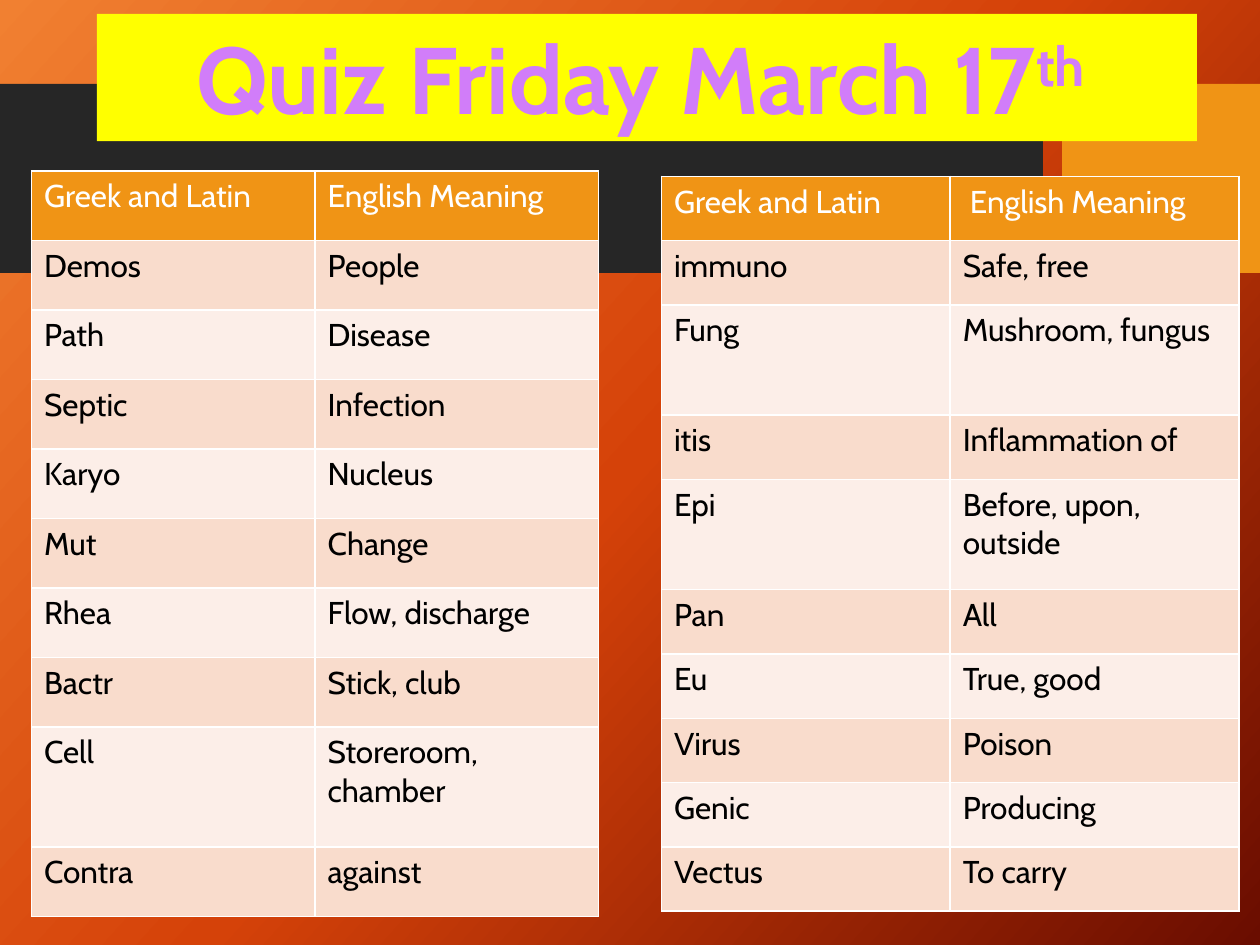
from copy import deepcopy
from dataclasses import dataclass

from pptx import Presentation
from pptx.dml.color import RGBColor
from pptx.enum import shapes, text
from pptx.oxml import ns, xmlchemy
from pptx.util import Pt


@dataclass(frozen=True)
class Theme:
    font: str = "Cabin"
    title_size: int = 54
    table_size: int = 18
    gradient: tuple = ("F18031", "D54209", "6A0D00")
    charcoal: str = "262626"
    orange: str = "F09415"
    yellow: str = "FFFF00"
    purple: str = "D17DF9"
    white: str = "FFFFFF"
    black: str = "000000"
    bands: tuple = ("F9DCCC", "FCEEE8")


THEME = Theme()

LEFT_WORDS = [
    ("Greek and Latin", "English Meaning"),
    ("Demos", "People"),
    ("Path", "Disease"),
    ("Septic", "Infection"),
    ("Karyo", "Nucleus"),
    ("Mut", "Change"),
    ("Rhea", "Flow, discharge"),
    ("Bactr", "Stick, club"),
    ("Cell", "Storeroom, chamber"),
    ("Contra", "against"),
]
RIGHT_WORDS = [
    ("Greek and Latin", " English Meaning"),
    ("immuno", "Safe, free"),
    ("Fung", "Mushroom, fungus"),
    ("itis", "Inflammation of"),
    ("Epi", "Before, upon, outside"),
    ("Pan", "All"),
    ("Eu", "True, good"),
    ("Virus", "Poison"),
    ("Genic", "Producing"),
    ("Vectus", "To carry"),
]


def rgb(value):
    return RGBColor.from_string(value)


def style_font(font, size, color, bold=False):
    font.name, font.size, font.bold = THEME.font, Pt(size), bold
    font.color.rgb = rgb(color)


def paint_background(slide):
    fill = slide.background.fill
    fill.gradient()
    fill.gradient_angle = 318
    stop_list = next(slide.element.iter(ns.qn("a:gsLst")))
    stop_list.append(deepcopy(stop_list[-1]))
    for index, (stop, color) in enumerate(zip(fill.gradient_stops, THEME.gradient)):
        stop.position = index / 2
        stop.color.rgb = rgb(color)


def add_block(slide, box, color):
    shape = slide.shapes.add_shape(shapes.MSO_SHAPE.RECTANGLE, *map(Pt, box))
    shape.shadow.inherit = False
    shape.fill.solid()
    shape.fill.fore_color.rgb = rgb(color)
    shape.line.fill.background()
    return shape


def add_band(slide, box, gap, accent_width):
    """Dark band across the box, ending in an orange accent after a gap."""
    left, top, width, height = box
    dark_width = width - gap - accent_width
    add_block(slide, (left, top, dark_width, height), THEME.charcoal)
    accent_left = left + dark_width + gap
    add_block(slide, (accent_left, top, accent_width, height), THEME.orange)


def add_title(slide, box):
    frame = add_block(slide, box, THEME.yellow).text_frame
    frame.word_wrap = False
    frame.vertical_anchor = text.MSO_ANCHOR.TOP
    paragraph = frame.paragraphs[0]
    paragraph.alignment = text.PP_ALIGN.CENTER
    style_font(paragraph.font, THEME.title_size, THEME.purple, bold=True)
    paragraph.add_run().text = "Quiz Friday March 17"
    ordinal = paragraph.add_run()
    ordinal.text = "th "
    ordinal.font._element.set("baseline", "30000")


def add_borders(cell):
    properties = cell._tc.get_or_add_tcPr()
    for side in "LRTB":
        line = xmlchemy.OxmlElement(f"a:ln{side}")
        line.set("w", str(Pt(1)))
        fill = xmlchemy.OxmlElement("a:solidFill")
        color = xmlchemy.OxmlElement("a:srgbClr")
        color.set("val", THEME.white)
        fill.append(color)
        line.append(fill)
        properties.append(line)


def add_word_table(slide, box, words, row_height, tall_rows, tall_height):
    table = slide.shapes.add_table(len(words), 2, *map(Pt, box)).table
    for column in table.columns:
        column.width = Pt(box[2] / 2)
    for index, pair in enumerate(words):
        height = tall_height if index in tall_rows else row_height
        table.rows[index].height = Pt(height)
        header = index == 0
        fill_color = THEME.orange if header else THEME.bands[(index - 1) % 2]
        for cell, word in zip(table.rows[index].cells, pair):
            add_borders(cell)
            cell.fill.solid()
            cell.fill.fore_color.rgb = rgb(fill_color)
            cell.text = word
            style_font(cell.text_frame.paragraphs[0].font, THEME.table_size,
                       THEME.white if header else THEME.black)


def main():
    presentation = Presentation()
    presentation.slide_width, presentation.slide_height = Pt(720), Pt(540)
    slide = presentation.slides.add_slide(presentation.slide_layouts[6])

    # Backdrop
    paint_background(slide)
    add_band(slide, (0, 48, 720, 108), gap=11, accent_width=113)

    # Word lists
    add_word_table(slide, (18, 97.7, 324, 426), LEFT_WORDS, 39.72, {8}, 68.6)
    add_word_table(slide, (378, 100.8, 330, 420), RIGHT_WORDS, 36.75, {2, 4}, 63)

    # Title
    add_title(slide, (55.4, 7.9, 628.6, 72.7))

    presentation.save("out.pptx")


if __name__ == "__main__":
    main()
